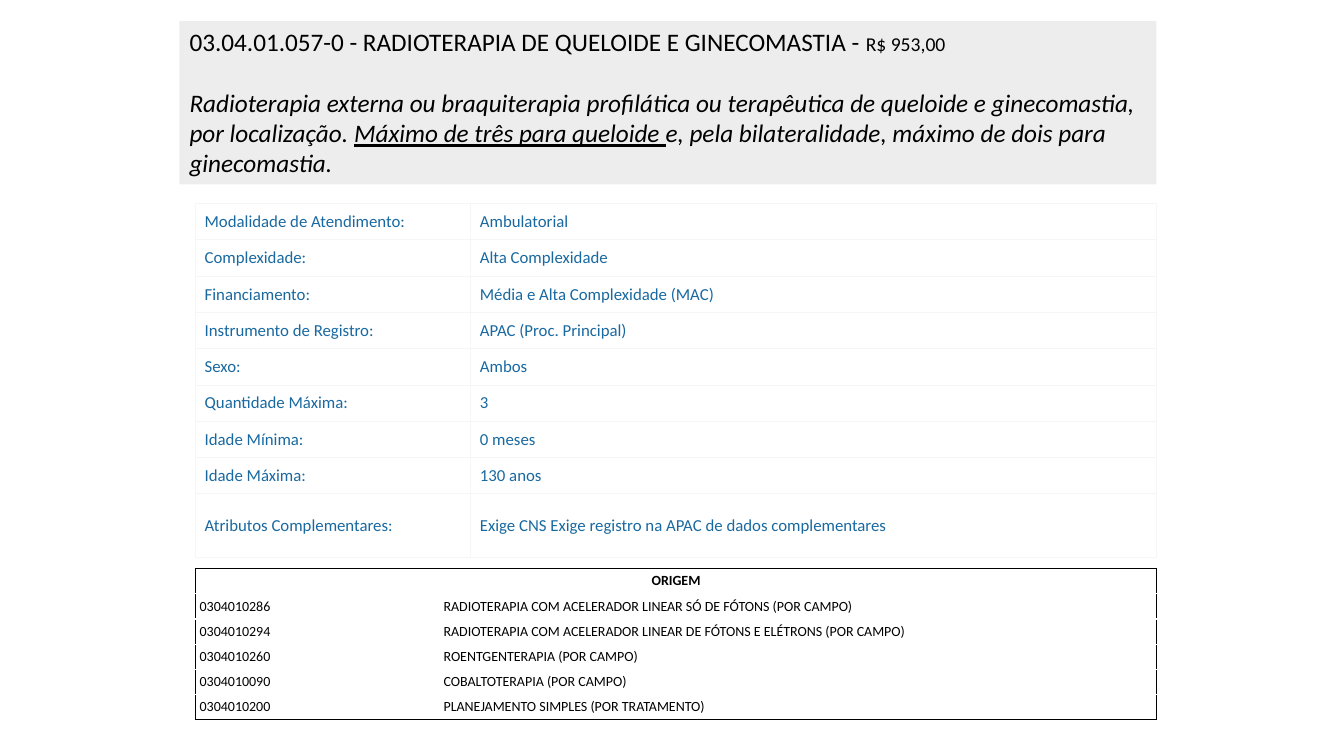
from dataclasses import dataclass

from lxml.etree import SubElement
from pptx import Presentation
from pptx.dml.color import RGBColor
from pptx.enum.text import MSO_ANCHOR as Anchor, MSO_AUTO_SIZE as AutoSize, PP_ALIGN as Align
from pptx.oxml.ns import qn
from pptx.util import Inches, Pt

# Each title paragraph is a list of (text, theme size name, font formats)
TITLE = [
    [
        ("03.04.01.057-0 - RADIOTERAPIA DE QUELOIDE E GINECOMASTIA - ", "title_size", {}),
        ("R$ 953,00", "price_size", {}),
    ],
    [
        ("Radioterapia externa ou braquiterapia profilática ou terapêutica de queloide "
         "e ginecomastia, por localização. ", "title_size", {"italic": True}),
        ("Máximo de três para queloide ", "title_size", {"italic": True, "underline": True}),
        ("e, pela bilateralidade, máximo de dois para ginecomastia.", "title_size",
         {"italic": True}),
    ],
]
ATTRIBUTES = [
    ("Modalidade de Atendimento:", "Ambulatorial"),
    ("Complexidade:", "Alta Complexidade"),
    ("Financiamento:", "Média e Alta Complexidade (MAC)"),
    ("Instrumento de Registro:", "APAC (Proc. Principal)"),
    ("Sexo:", "Ambos"),
    ("Quantidade Máxima:", "3"),
    ("Idade Mínima:", "0 meses"),
    ("Idade Máxima:", "130 anos"),
    ("Atributos Complementares:", "Exige CNS Exige registro na APAC de dados complementares"),
]
ORIGINS = [
    ("ORIGEM", ""),
    ("0304010286", "RADIOTERAPIA COM ACELERADOR LINEAR SÓ DE FÓTONS (POR CAMPO)"),
    ("0304010294", "RADIOTERAPIA COM ACELERADOR LINEAR DE FÓTONS E ELÉTRONS (POR CAMPO)"),
    ("0304010260", "ROENTGENTERAPIA (POR CAMPO)"),
    ("0304010090", "COBALTOTERAPIA (POR CAMPO)"),
    ("0304010200", "PLANEJAMENTO SIMPLES (POR TRATAMENTO)"),
]


@dataclass(frozen=True)
class Theme:
    font: str = "Calibri"
    ink: str = "000000"
    blue: str = "1969A0"
    paper: str = "FFFFFF"
    title_fill: str = "EDEDED"
    grid_line: str = "F6F6F6"
    title_size: float = 18
    price_size: float = 14
    attribute_size: float = 12
    origin_size: float = 10
    title_gap: float = 22


THEME = Theme()
SLIDE_SIZE = (13.33, 7.5)
TITLE_BOX = (1.78, 0.21, 9.69, 1.62)
TABLE_LEFT, TABLE_WIDTH = 1.94, 9.53
ATTRIBUTES_TOP, ORIGINS_TOP = 2.02, 5.64
ATTRIBUTE_ROWS = [0.36] * (len(ATTRIBUTES) - 1) + [0.63]
ORIGIN_ROWS = [0.25] * len(ORIGINS)
SIDES = ("L", "R", "T", "B")


def paint(fill, color):
    fill.solid()
    fill.fore_color.rgb = RGBColor.from_string(color)


def set_font(font, size, color, **formats):
    paint(font.fill, color)
    for name, value in {"name": THEME.font, "size": Pt(size), **formats}.items():
        setattr(font, name, value)


def set_borders(cell, sides, color, width):
    properties = cell._tc.get_or_add_tcPr()
    for index, side in enumerate(sides):
        line = SubElement(properties, qn(f"a:ln{side}"), w=str(Pt(width)))
        SubElement(SubElement(line, qn("a:solidFill")), qn("a:srgbClr"), val=color)
        properties.insert(index, line)


def outer_sides(row, column, row_count, column_count):
    on_edge = (column == 0, column == column_count - 1, row == 0, row == row_count - 1)
    return [side for side, edge in zip(SIDES, on_edge) if edge]


def add_title(slide):
    title = slide.shapes.title
    title.left, title.top, title.width, title.height = map(Inches, TITLE_BOX)
    paint(title.fill, THEME.title_fill)
    frame = title.text_frame
    frame.word_wrap = True
    frame.auto_size = AutoSize.SHAPE_TO_FIT_TEXT
    frame.vertical_anchor = Anchor.TOP
    for index, runs in enumerate(TITLE):
        paragraph = frame.add_paragraph() if index else frame.paragraphs[0]
        paragraph.alignment = Align.LEFT
        paragraph.space_before = Pt(THEME.title_gap if index else 0)
        for text, size_name, formats in runs:
            run = paragraph.add_run()
            run.text = text
            set_font(run.font, getattr(THEME, size_name), THEME.ink, **formats)


def add_table(slide, rows, top, row_heights, first_column, size, color, side_margin,
              line_color, line_width, outline_only=False):
    frame = slide.shapes.add_table(
        len(rows), 2, Inches(TABLE_LEFT), Inches(top),
        Inches(TABLE_WIDTH), Inches(sum(row_heights)))
    table = frame.table
    table.first_row = table.horz_banding = False
    for column, width in zip(table.columns, (first_column, TABLE_WIDTH - first_column)):
        column.width = Inches(width)
    cell_format = {
        "vertical_anchor": Anchor.MIDDLE,
        "margin_left": Inches(side_margin), "margin_right": Inches(side_margin),
        "margin_top": Inches(0.04), "margin_bottom": Inches(0.04),
    }
    for row, (texts, height) in enumerate(zip(rows, row_heights)):
        table.rows[row].height = Inches(height)
        for column, text in enumerate(texts):
            cell = table.cell(row, column)
            for name, value in cell_format.items():
                setattr(cell, name, value)
            paint(cell.fill, THEME.paper)
            sides = outer_sides(row, column, len(rows), 2) if outline_only else SIDES
            set_borders(cell, sides, line_color, line_width)
            paragraph = cell.text_frame.paragraphs[0]
            set_font(paragraph.font, size, color)
            if text:
                run = paragraph.add_run()
                run.text = text
                set_font(run.font, size, color)
    return table


def main():
    presentation = Presentation()
    presentation.slide_width, presentation.slide_height = map(Inches, SLIDE_SIZE)
    slide = presentation.slides.add_slide(presentation.slide_layouts.get_by_name("Title Only"))
    add_title(slide)
    add_table(slide, ATTRIBUTES, ATTRIBUTES_TOP, ATTRIBUTE_ROWS, 2.73,
              THEME.attribute_size, THEME.blue, 0.09, THEME.grid_line, 0.75)
    origins = add_table(slide, ORIGINS, ORIGINS_TOP, ORIGIN_ROWS, 2.42,
                        THEME.origin_size, THEME.ink, 0.04, THEME.ink, 1, outline_only=True)
    heading = origins.cell(0, 0)
    heading.merge(origins.cell(0, 1))
    set_borders(heading, ["R"], THEME.ink, 1)
    properties = heading._tc.tcPr
    properties.insert(0, properties.find(qn("a:lnL")))
    heading_paragraph = heading.text_frame.paragraphs[0]
    heading_paragraph.alignment = Align.CENTER
    heading_paragraph.runs[0].font.bold = True
    presentation.save("out.pptx")


if __name__ == "__main__":
    main()
